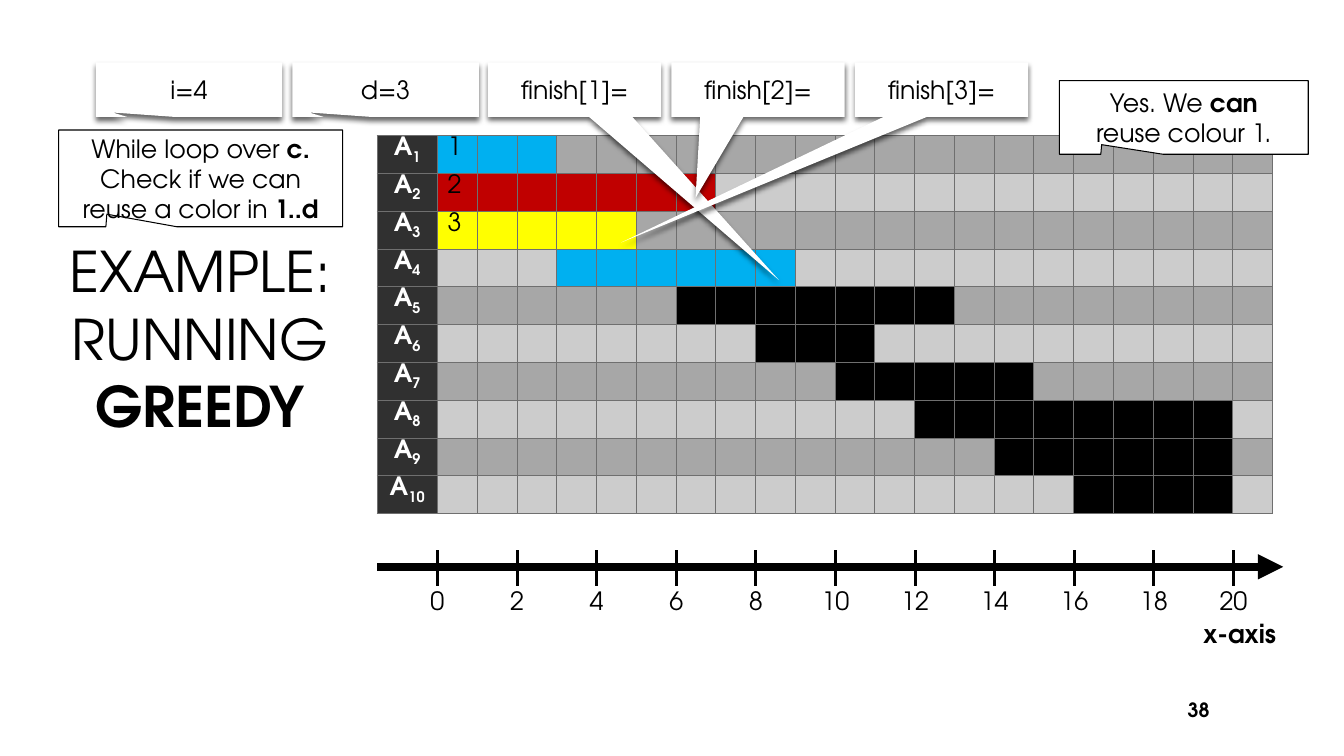
from lxml.etree import SubElement
from pptx import Presentation
from pptx.dml.color import RGBColor
from pptx.enum.shapes import MSO_CONNECTOR, MSO_SHAPE
from pptx.enum.text import MSO_ANCHOR, PP_ALIGN
from pptx.oxml import parse_xml
from pptx.oxml.ns import nsdecls, qn
from pptx.util import Pt

FONT = "TeX Gyre Adventor"
BLACK = RGBColor(0x00, 0x00, 0x00)
WHITE = RGBColor(0xFF, 0xFF, 0xFF)
HEADER = RGBColor(0x30, 0x30, 0x30)
GRID = RGBColor(0x6F, 0x6F, 0x6F)
DARK_BAND = RGBColor(0xA7, 0xA7, 0xA7)
LIGHT_BAND = RGBColor(0xCC, 0xCC, 0xCC)
BLUE = RGBColor(0x00, 0xB0, 0xF0)
RED = RGBColor(0xC0, 0x00, 0x00)
YELLOW = RGBColor(0xFF, 0xFF, 0x00)

TABLE_LEFT, TABLE_TOP = 269.3, 97
LABEL_WIDTH, STEP, ROW_HEIGHT = 43.2, 28.43, 27
STEPS = 21
ORIGIN = TABLE_LEFT + LABEL_WIDTH

ACTIVITIES = [
    (0, 3, BLUE, "1"), (0, 7, RED, "2"), (0, 5, YELLOW, "3"),
    (3, 9, BLUE, ""), (6, 13, BLACK, ""), (8, 11, BLACK, ""),
    (10, 15, BLACK, ""), (12, 20, BLACK, ""), (14, 20, BLACK, ""),
    (16, 20, BLACK, ""),
]
NOTES = [
    ((756.7, 57.6, 177.8, 52.6), ["Yes. We *can*\vreuse colour 1."]),
    ((41.8, 92.9, 203, 69.1),
     ["While loop over *c.*", "Check if we can reuse a color in *1..d*"]),
]
STATES = [
    (68.4, 133.2, "i=4", (-0.41, 0.42)),
    (208.8, 133.2, "d=3", (-0.41, 0.42)),
    (348.5, 123.8, "finish[1]=", (1.18, 3.5)),
    (479.5, 123.8, "finish[2]=", (-0.36, 1.99)),
    (610.6, 123.8, "finish[3]=", (-1.85, 2.81)),
]


class Slide:
    """Holds the text style and the page, and adds each kind of element."""

    def __init__(self, page, size=18):
        self.page = page
        self.size = size

    def style(self, span, size=None, color=BLACK, bold=False):
        """Format one run."""
        span.font.name = FONT
        span.font.size = Pt(size or self.size)
        span.font.color.rgb = color
        span.font.bold = bold

    def fill_frame(self, frame, lines, size=None, align=PP_ALIGN.CENTER,
                   anchor=MSO_ANCHOR.MIDDLE):
        """Fill a frame, with *bold* marks and vertical tabs as line breaks."""
        frame.word_wrap = True
        frame.vertical_anchor = anchor
        for index, line in enumerate(lines):
            para = frame.add_paragraph() if index else frame.paragraphs[0]
            para.alignment = align
            for order, part in enumerate(line.split("*")):
                if part.startswith("\v"):
                    para.add_line_break()
                if part.strip():
                    span = para.add_run()
                    span.text = part.lstrip("\v")
                    self.style(span, size, bold=order % 2 == 1)

    def title(self, area, text):
        """Place and fill the title placeholder."""
        box = self.page.shapes.title
        box.left, box.top, box.width, box.height = map(Pt, area)
        self.fill_frame(box.text_frame, [text], 40)

    def text(self, area, text, wrap=True, **options):
        """Add a text box."""
        box = self.page.shapes.add_textbox(*map(Pt, area))
        self.fill_frame(box.text_frame, [text], **options)
        box.text_frame.word_wrap = wrap

    def callout(self, area, lines, tip, raised=False):
        """Add a white callout, either outlined or raised by a shadow."""
        box = self.page.shapes.add_shape(MSO_SHAPE.RECTANGULAR_CALLOUT, *map(Pt, area))
        box.adjustments[0], box.adjustments[1] = tip
        box.fill.solid()
        box.fill.fore_color.rgb = WHITE
        box.shadow.inherit = False
        if raised:
            box.line.fill.background()
            effects = box._element.spPr.find(qn("a:effectLst"))
            effects.append(parse_xml(
                f'<a:outerShdw {nsdecls("a")} blurRad="{Pt(4)}" dist="{Pt(3)}" dir="5400000">'
                '<a:srgbClr val="000000"><a:alpha val="60000"/></a:srgbClr></a:outerShdw>'))
        else:
            box.line.color.rgb = BLACK
            box.line.width = Pt(0.75)
        self.fill_frame(box.text_frame, lines)

    def line(self, start, end, width, arrow=False):
        """Add a straight black line."""
        line = self.page.shapes.add_connector(
            MSO_CONNECTOR.STRAIGHT, *map(Pt, start + end))
        line.line.color.rgb = BLACK
        line.line.width = Pt(width)
        properties = line._element.spPr
        if arrow:
            SubElement(properties.find(qn("a:ln")), qn("a:tailEnd"), type="triangle")
        SubElement(properties, qn("a:effectLst"))

    def cell(self, cell, color, left=0.75, right=0.75):
        """Fill and border one table cell."""
        properties = cell._tc.get_or_add_tcPr()
        for side, width in (("L", left), ("R", right), ("T", 0.75), ("B", 0.75)):
            properties.append(parse_xml(
                f'<a:ln{side} {nsdecls("a")} w="{Pt(width)}"><a:solidFill>'
                f'<a:srgbClr val="{GRID}"/></a:solidFill></a:ln{side}>'))
        cell.fill.solid()
        cell.fill.fore_color.rgb = color
        cell.margin_top = Pt(1)
        cell.margin_bottom = Pt(0)

    def schedule(self, activities):
        """Add the table with one row for each activity."""
        table = self.page.shapes.add_table(
            len(activities), STEPS + 1, Pt(TABLE_LEFT), Pt(TABLE_TOP),
            Pt(LABEL_WIDTH + STEPS * STEP), Pt(ROW_HEIGHT * len(activities))).table
        table.first_row = table.horz_banding = False
        for index, column in enumerate(table.columns):
            column.width = Pt(STEP if index else LABEL_WIDTH)
        for row, (start, finish, color, mark) in enumerate(activities):
            table.rows[row].height = Pt(ROW_HEIGHT)
            label = table.cell(row, 0)
            self.cell(label, HEADER, right=1.5)
            para = label.text_frame.paragraphs[0]
            para.alignment = PP_ALIGN.CENTER
            for text in ("A", str(row + 1)):
                span = para.add_run()
                span.text = text
                self.style(span, color=WHITE, bold=True)
            span._r.get_or_add_rPr().set("baseline", "-25000")
            band = LIGHT_BAND if row % 2 else DARK_BAND
            for step in range(STEPS):
                cell = table.cell(row, step + 1)
                self.cell(cell, color if start <= step < finish else band,
                          left=0.75 if step else 1.5)
            if mark:
                first = table.cell(row, 1)
                first.text_frame.text = mark
                self.style(first.text_frame.paragraphs[0].runs[0])

    def axis(self):
        """Add the x-axis with its ticks and numbers."""
        self.line((TABLE_LEFT, 404.9), (916.6, 404.9), 6, arrow=True)
        self.text((852.5, 437.8, 67, 28.8), "*x-axis*", wrap=False,
                  align=PP_ALIGN.LEFT, anchor=MSO_ANCHOR.TOP)
        for value in range(0, STEPS, 2):
            x = ORIGIN + value * STEP
            self.line((x, 393.1), (x, 418.3), 2.25)
            self.text((x - 28, 414.5, 56, 28.8), str(value), anchor=MSO_ANCHOR.TOP)


def main():
    """Build and save the deck."""
    deck = Presentation()
    deck.slide_width, deck.slide_height = Pt(960), Pt(540)
    slide = Slide(deck.slides.add_slide(deck.slide_layouts[5]))
    slide.title((26.6, 97.2, 232.6, 288), "EXAMPLE: RUNNING *GREEDY*")
    slide.schedule(ACTIVITIES)
    slide.axis()
    for area, lines in NOTES:
        slide.callout(area, lines, (-0.33, 0.37))
    for left, width, text, tip in STATES:
        slide.callout((left, 44.6, width, 38.9), [text], tip, raised=True)
    slide.text((828, 492.5, 43.2, 28.8), "*38*", size=14, align=PP_ALIGN.RIGHT)
    deck.save("out.pptx")


if __name__ == "__main__":
    main()
